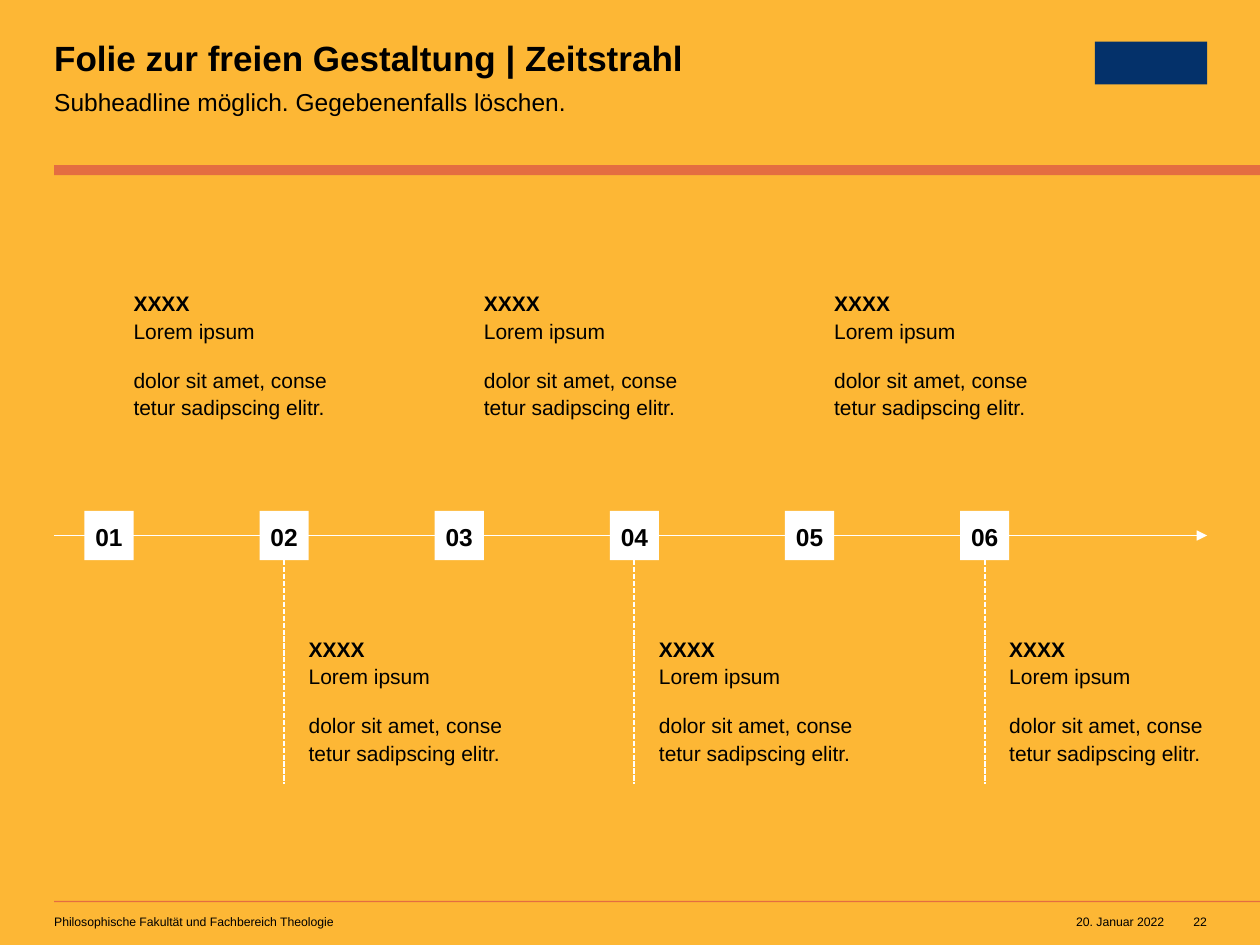
from dataclasses import dataclass

from lxml import etree
from pptx import Presentation
from pptx.dml.color import RGBColor
from pptx.enum.dml import MSO_LINE
from pptx.enum.shapes import MSO_CONNECTOR, MSO_SHAPE
from pptx.enum.text import MSO_ANCHOR, MSO_AUTO_SIZE, PP_ALIGN
from pptx.oxml.ns import qn
from pptx.util import Inches, Pt

RECTANGLE = MSO_SHAPE.RECTANGLE
STRAIGHT = MSO_CONNECTOR.STRAIGHT
DASHED = MSO_LINE.SQUARE_DOT
TOP, MIDDLE = MSO_ANCHOR.TOP, MSO_ANCHOR.MIDDLE
LEFT, CENTER, RIGHT = PP_ALIGN.LEFT, PP_ALIGN.CENTER, PP_ALIGN.RIGHT
NO_FIT = MSO_AUTO_SIZE.NONE
BOTTOM_SIDE = 2


@dataclass(frozen=True)
class Theme:
    font: str = "Arial"
    background: str = "FDB735"
    accent: str = "E46D41"
    emblem: str = "04316A"
    light: str = "FFFFFF"
    ink: str = "000000"
    title: int = 20
    heading: int = 14
    body: int = 12
    footer: int = 7


class TimelineSlide:
    """Draws styled elements on one slide."""

    def __init__(self, slide, theme):
        self.slide = slide
        self.theme = theme
        fill = slide.background.fill
        fill.solid()
        fill.fore_color.rgb = RGBColor.from_string(theme.background)

    def set_text(self, shape, text, size, bold=False, align=LEFT, anchor=TOP,
                 spacing=1.0, after=0, wrap=True):
        frame = shape.text_frame
        frame.text = text
        frame.auto_size = NO_FIT
        frame.word_wrap = wrap
        frame.vertical_anchor = anchor
        frame.margin_left = frame.margin_right = 0
        frame.margin_top = frame.margin_bottom = 0
        for paragraph in frame.paragraphs:
            paragraph.alignment = align
            paragraph.line_spacing = spacing
            paragraph.space_before = Pt(0)
            paragraph.space_after = Pt(after)
            for run in paragraph.runs:
                run.font.name = self.theme.font
                run.font.size = Pt(size)
                run.font.bold = bold
                run.font.color.rgb = RGBColor.from_string(self.theme.ink)
        return frame

    def title(self, text, left, top, width, height):
        heading = self.slide.shapes.title
        heading.left, heading.top = Inches(left), Inches(top)
        heading.width, heading.height = Inches(width), Inches(height)
        self.set_text(heading, text, self.theme.title, bold=True, spacing=0.9)

    def text(self, text, left, top, width, height, size, **style):
        box = self.slide.shapes.add_textbox(
            Inches(left), Inches(top), Inches(width), Inches(height))
        return self.set_text(box, text, size, **style)

    def block(self, left, top, width, height, color):
        block = self.slide.shapes.add_shape(
            RECTANGLE, Inches(left), Inches(top), Inches(width), Inches(height))
        block.shadow.inherit = False
        block.fill.solid()
        block.fill.fore_color.rgb = RGBColor.from_string(color)
        block.line.fill.background()
        return block

    def line(self, start, end):
        line = self.slide.shapes.add_connector(
            STRAIGHT, *(Inches(value) for value in (*start, *end)))
        line.line.color.rgb = RGBColor.from_string(self.theme.light)
        line.line.width = Pt(1)
        etree.SubElement(line._element.spPr, qn("a:effectLst"))
        return line

    def arrow(self, start, end):
        outline = self.line(start, end)._element.spPr.find(qn("a:ln"))
        etree.SubElement(outline, qn("a:tailEnd"), type="triangle")

    def marker(self, number, left, top, side):
        marker = self.block(left, top, side, side, self.theme.light)
        self.set_text(marker, f"{number:02d}", self.theme.heading, bold=True,
                      align=CENTER, anchor=MIDDLE, spacing=1.1, after=12)
        return marker

    def stem(self, marker, x, top, bottom):
        stem = self.line((x, top), (x, bottom))
        stem.line.dash_style = DASHED
        stem.begin_connect(marker, BOTTOM_SIDE)

    def event(self, text, left, top):
        frame = self.text(text, left, top, 1.55, 1.04, self.theme.body,
                          spacing=1.1, after=12, wrap=False)
        frame.paragraphs[0].runs[0].font.bold = True


def main():
    deck = Presentation()
    deck.slide_width, deck.slide_height = Inches(10), Inches(7.5)
    theme = Theme()
    page = TimelineSlide(deck.slides.add_slide(deck.slide_layouts[5]), theme)

    margin, right_edge = 0.43, 9.58
    page.block(margin, 7.15, 10 - margin, 0.01, theme.accent)
    page.block(margin, 1.31, 10 - margin, 0.08, theme.accent)
    page.block(8.69, 0.33, 0.89, 0.34, theme.emblem)
    page.title("Folie zur freien Gestaltung | Zeitstrahl", margin, 0.33, 5.61, 0.3)
    page.text("Subheadline möglich. Gegebenenfalls löschen.", margin, 0.67, 5.61, 0.24,
              theme.heading, spacing=1.1, after=8)

    footers = (
        ("Philosophische Fakultät und Fachbereich Theologie", margin, 4.49, LEFT),
        ("20. Januar 2022", 8.53, 0.71, RIGHT),
        ("22", 9.38, 0.2, RIGHT),
    )
    for text, left, width, align in footers:
        page.text(text, left, 7.26, width, 0.12, theme.footer, align=align)

    axis, side, first, pitch = 4.25, 0.39, 0.67, 1.39
    marker_top = axis - side / 2
    event_text = "XXXX\vLorem ipsum\ndolor sit amet, conse\vtetur sadipscing elitr."
    page.arrow((margin, axis), (right_edge, axis))
    for number in range(1, 7):
        left = first + (number - 1) * pitch
        below = number % 2 == 0
        marker = page.marker(number, left, marker_top, side)
        page.event(event_text, left + side, 5.03 if below else 2.29)
        if below:
            page.stem(marker, left + side / 2, marker_top + side, 6.22)

    deck.save("out.pptx")


if __name__ == "__main__":
    main()
